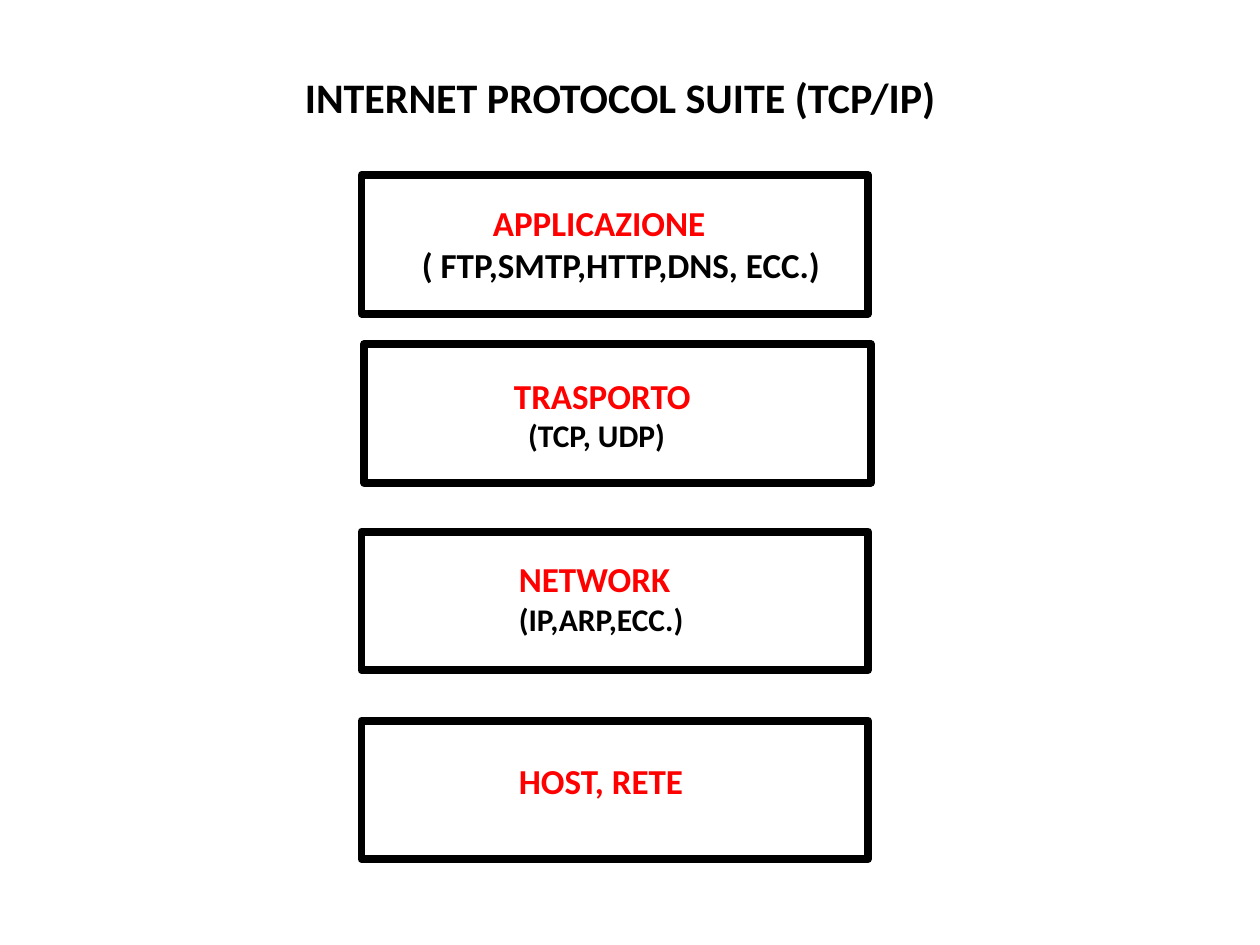
from pptx import Presentation
from pptx.dml.color import RGBColor
from pptx.enum.shapes import MSO_SHAPE
from pptx.enum.text import MSO_ANCHOR, MSO_AUTO_SIZE, PP_ALIGN
from pptx.util import Pt

BLACK, RED = "000000", "FF0000"
BOX_WIDTH, BOX_HEIGHT = 289.5, 79.2

# Box left and top, label offset in the box, lines of (text, size, colour, indent)
LAYERS = [
    (206.6, 100.1, 27.4, 11.5, [("APPLICAZIONE", 20, RED, 40.6),
                                ("( FTP,SMTP,HTTP,DNS, ECC.)", 20, BLACK, 0)]),
    (208.1, 196.6, 78.5, 13.7, [("TRASPORTO", 20, RED, 0),
                                ("(TCP, UDP)", 18, BLACK, 8.1)]),
    (206.6, 303.8, 82.8, 11.5, [("NETWORK", 20, RED, 0),
                                ("(IP,ARP,ECC.)", 18, BLACK, 0)]),
    (206.6, 411.8, 82.8, 18.7, [("HOST, RETE", 20, RED, 0)]),
]


def color(value):
    return RGBColor.from_string(value)


def format_paragraph(paragraph, text, size, text_color, indent=0):
    paragraph.text = text
    paragraph.alignment = PP_ALIGN.LEFT
    if indent:
        paragraph._p.get_or_add_pPr().set("marL", str(Pt(indent)))
    font = paragraph.font
    font.name, font.size, font.bold = "Calibri", Pt(size), True
    font.color.rgb = color(text_color)


def add_title(slide, left, top, width, height):
    title = slide.shapes.title
    title.left, title.top = Pt(left), Pt(top)
    title.width, title.height = Pt(width), Pt(height)
    frame = title.text_frame
    frame.auto_size = MSO_AUTO_SIZE.NONE
    frame.vertical_anchor = MSO_ANCHOR.TOP
    format_paragraph(frame.paragraphs[0], "INTERNET PROTOCOL SUITE (TCP/IP)", 24, BLACK)


def add_layer(slide, left, top, label_x, label_y, lines):
    # Outlined box
    box = slide.shapes.add_shape(MSO_SHAPE.RECTANGLE, Pt(left), Pt(top),
                                 Pt(BOX_WIDTH), Pt(BOX_HEIGHT))
    box.shadow.inherit = False
    box.fill.background()
    box.line.color.rgb = color(BLACK)
    box.line.width = Pt(4.5)

    # Label, reaching to the right edge of the box
    label = slide.shapes.add_textbox(Pt(left + label_x), Pt(top + label_y),
                                     Pt(BOX_WIDTH - label_x), Pt(BOX_HEIGHT - 2 * label_y))
    frame = label.text_frame
    frame.word_wrap = True
    for index, line in enumerate(lines):
        paragraph = frame.add_paragraph() if index else frame.paragraphs[0]
        format_paragraph(paragraph, *line)


def main():
    presentation = Presentation()
    presentation.slide_width, presentation.slide_height = Pt(720), Pt(540)
    slide = presentation.slides.add_slide(presentation.slide_layouts[5])
    add_title(slide, 167, 37.4, 391, 36)
    for layer in LAYERS:
        add_layer(slide, *layer)
    presentation.save("out.pptx")


if __name__ == "__main__":
    main()
